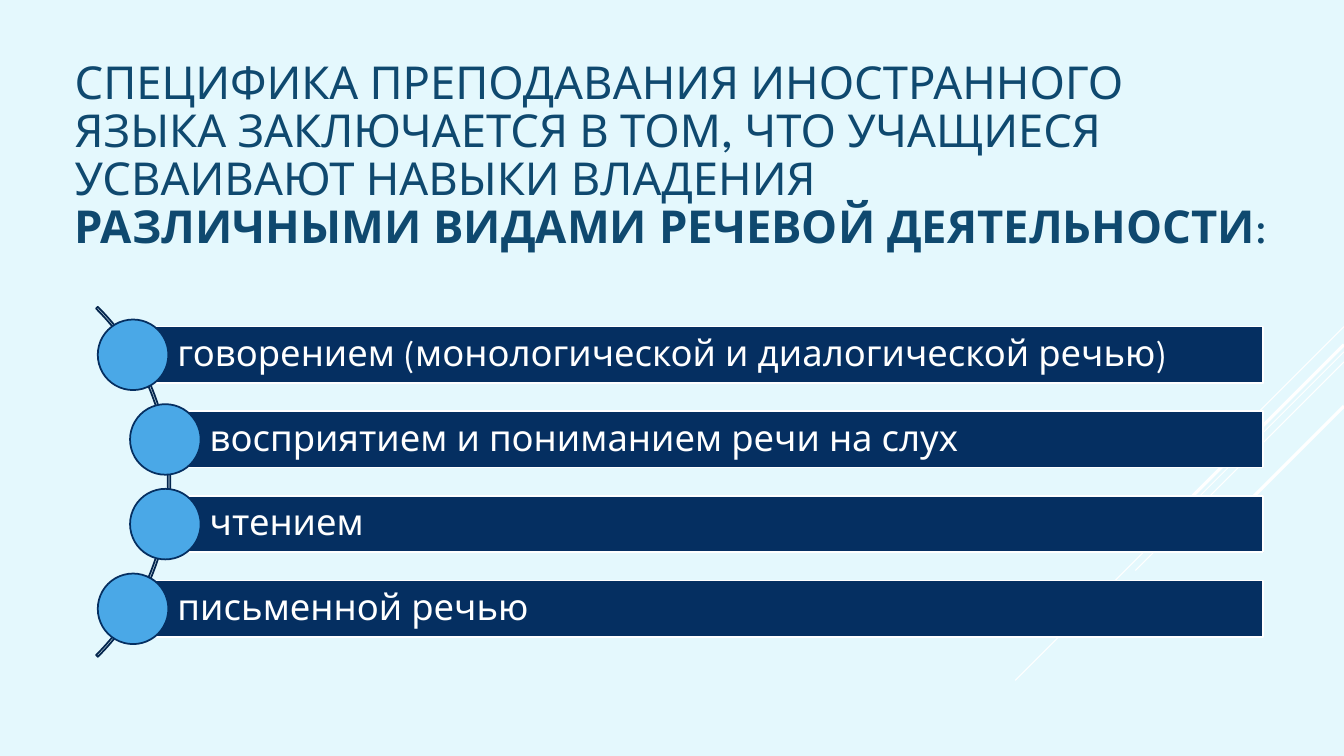
import pptx
import pptx.util
import pptx.dml.color
import pptx.enum.shapes
import pptx.enum.text
import pptx.oxml

W, H = 13.33, 7.5
FONT = "League Spartan"
COLORS = {
    "background": "E4F8FD",
    "title": "0F496F",
    "bar": "052F61",
    "arc": "04264E",
    "dot": "4AA8E7",
    "white": "FFFFFF",
}
TITLE = [
    ("СПЕЦИФИКА ПРЕПОДАВАНИЯ ИНОСТРАННОГО ЯЗЫКА ЗАКЛЮЧАЕТСЯ В ТОМ, "
     "ЧТО УЧАЩИЕСЯ УСВАИВАЮТ НАВЫКИ ВЛАДЕНИЯ", False),
    ("РАЗЛИЧНЫМИ ВИДАМИ РЕЧЕВОЙ ДЕЯТЕЛЬНОСТИ", True),
    (":", False),
]
SKILLS = [
    ("говорением (монологической и диалогической речью)", 1.32),
    ("восприятием и пониманием речи на слух", 1.64),
    ("чтением", 1.64),
    ("письменной речью", 1.32),
]
RAYS = [
    (3.24, 1.0, 0.75),
    (3.49, 3.26, 0.75),
    (3.59, 2.07, 0.75),
    (3.42, 1.91, 2.25),
    (4.03, 1.39, 2.25),
]
FIRST_ROW, ROW_STEP = 3.52, 0.84
BAR_RIGHT, BAR_HEIGHT = 12.53, 0.56
DOT, ARC = 0.7, 4.91
SHAPES = pptx.enum.shapes.MSO_SHAPE


def inches(*values):
    return [pptx.util.Inches(v) for v in values]


def rgb(name):
    return pptx.dml.color.RGBColor.from_string(COLORS[name])


def apply(target, values):
    for name, value in values.items():
        setattr(target, name, value)


def format_frame(tf, left, top, right, bottom):
    margins = inches(left, top, right, bottom)
    names = ("margin_left", "margin_top", "margin_right", "margin_bottom")
    apply(tf, dict(zip(names, margins)))
    apply(tf, {
        "word_wrap": True,
        "auto_size": pptx.enum.text.MSO_AUTO_SIZE.NONE,
        "vertical_anchor": pptx.enum.text.MSO_ANCHOR.MIDDLE,
    })


def add_run(p, text, size, color, bold=False):
    r = p.add_run()
    r.text = text
    apply(r.font, {"name": FONT, "size": pptx.util.Pt(size), "bold": bold})
    r.font.color.rgb = rgb(color)


def add_title(s):
    sp = s.shapes.title
    apply(sp, dict(zip(("left", "top", "width", "height"),
                       inches(0.64, 0.7, 12.07, 1.72))))
    format_frame(sp.text_frame, 0.1, 0.05, 0.1, 0.05)
    p = sp.text_frame.paragraphs[0]
    apply(p, {"alignment": pptx.enum.text.PP_ALIGN.LEFT, "line_spacing": 0.88})
    for text, bold in TITLE:
        if bold:
            p.add_line_break()
        add_run(p, text, 32.4, "title", bold)


def add_ray(s, top, run, width):
    line = s.shapes.add_connector(
        pptx.enum.shapes.MSO_CONNECTOR.STRAIGHT,
        *inches(W, top, W - run, top + run))
    line.line.color.rgb = rgb("white")
    line.line.width = pptx.util.Pt(width)
    effects = pptx.oxml.parse_xml(
        '<a:effectLst xmlns:a="http://schemas.openxmlformats.org/drawingml/2006/main"/>')
    line._element.spPr.append(effects)


def add_figure(s, kind, box, line, fill=None):
    sp = s.shapes.add_shape(kind, *inches(*box))
    sp.shadow.inherit = False
    if fill:
        sp.fill.solid()
        sp.fill.fore_color.rgb = rgb(fill)
    else:
        sp.fill.background()
    sp.line.color.rgb = rgb(line)
    sp.line.width = pptx.util.Pt(1.25)
    return sp


def add_arc(s):
    middle = FIRST_ROW + ROW_STEP * (len(SKILLS) - 1) / 2
    sp = add_figure(s, SHAPES.BLOCK_ARC, (-3.22, middle - ARC / 2, ARC, ARC), "arc")
    for i, value in enumerate((189, 27, 0.005)):
        sp.adjustments[i] = value


def add_skill(s, text, left, middle):
    box = (left, middle - BAR_HEIGHT / 2, BAR_RIGHT - left, BAR_HEIGHT)
    bar = add_figure(s, SHAPES.RECTANGLE, box, "white", "bar")
    format_frame(bar.text_frame, 0.44, 0.07, 0.07, 0.07)
    p = bar.text_frame.paragraphs[0]
    apply(p, {"alignment": pptx.enum.text.PP_ALIGN.LEFT, "line_spacing": 0.9})
    add_run(p, text, 26, "white")
    add_figure(s, SHAPES.OVAL, (left - DOT / 2, middle - DOT / 2, DOT, DOT),
               "bar", "dot")


def main():
    prs = pptx.Presentation()
    prs.slide_width, prs.slide_height = inches(W, H)
    s = prs.slides.add_slide(prs.slide_layouts[5])
    s.background.fill.solid()
    s.background.fill.fore_color.rgb = rgb("background")
    for ray in RAYS:
        add_ray(s, *ray)
    add_title(s)
    add_arc(s)
    for i, (text, left) in enumerate(SKILLS):
        add_skill(s, text, left, FIRST_ROW + i * ROW_STEP)
    prs.save("out.pptx")


if __name__ == "__main__":
    main()
